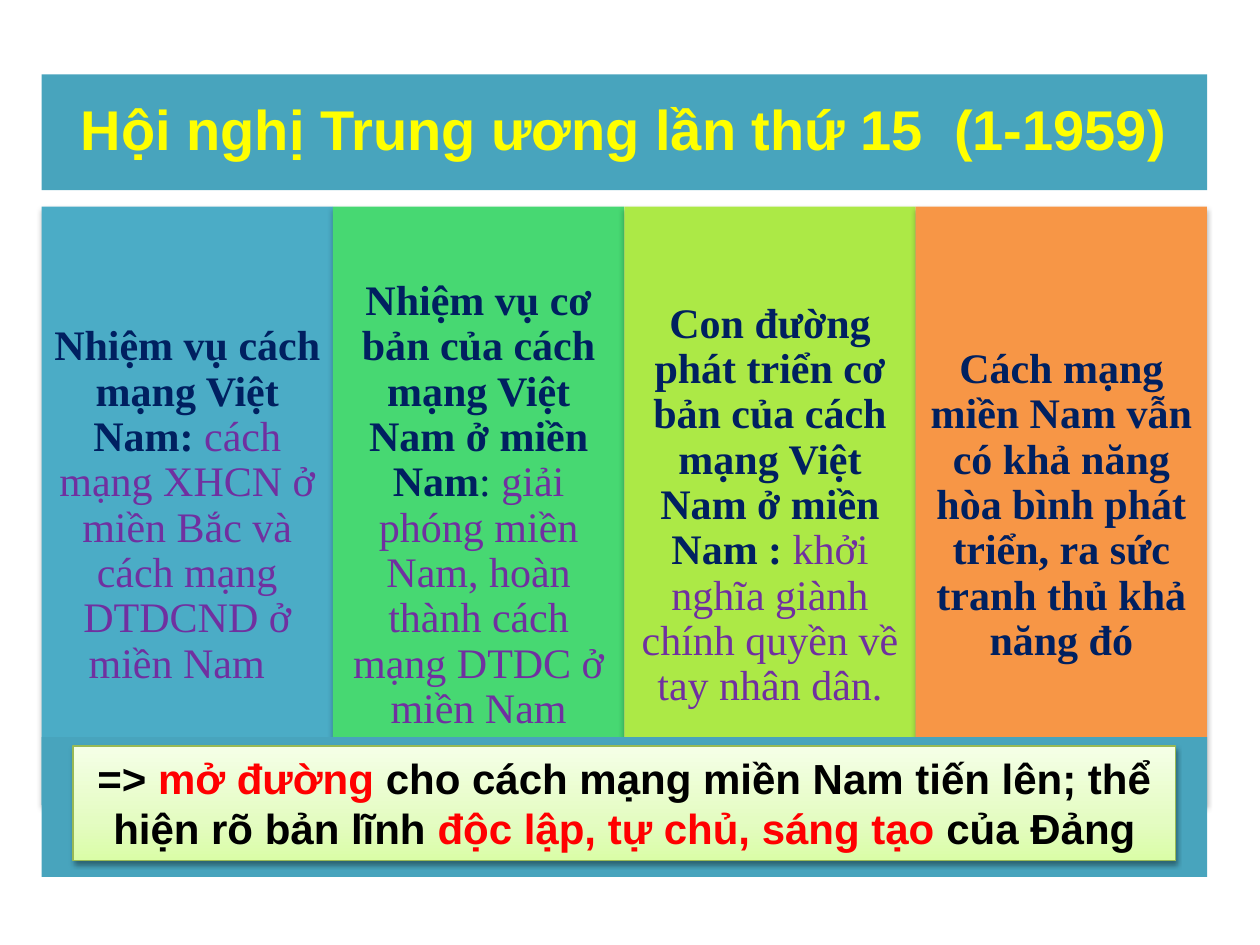
from lxml import etree
from pptx import Presentation
from pptx.dml.color import RGBColor
from pptx.enum.shapes import MSO_SHAPE as SHAPE
from pptx.enum.text import MSO_ANCHOR as ANCHOR, PP_ALIGN as ALIGN
from pptx.oxml import parse_xml
from pptx.oxml.ns import nsdecls, qn
from pptx.util import Inches, Pt

TEAL = RGBColor(0x48, 0xA4, 0xBD)
BLUE = RGBColor(0x4B, 0xAC, 0xC6)
GREEN = RGBColor(0x47, 0xD8, 0x72)
LIME = RGBColor(0xAC, 0xE9, 0x46)
ORANGE = RGBColor(0xF7, 0x96, 0x46)
OLIVE = RGBColor(0x98, 0xB9, 0x55)
YELLOW = RGBColor(0xFF, 0xFF, 0x00)
NAVY = RGBColor(0x00, 0x20, 0x60)
PURPLE = RGBColor(0x70, 0x30, 0xA0)
BLACK = RGBColor(0x00, 0x00, 0x00)
RED = RGBColor(0xFF, 0x00, 0x00)

LEFT, WIDTH = 0.33, 9.25

prs = Presentation()
prs.slide_width, prs.slide_height = Inches(10), Inches(7.5)
s = prs.slides.add_slide(prs.slide_layouts[6])


def add_box(x, y, w, h, fill=None, shadow=None):
    """Add a borderless rectangle; shadow is (opacity %, distance in points)."""
    sp = s.shapes.add_shape(SHAPE.RECTANGLE, Inches(x), Inches(y), Inches(w), Inches(h))
    sp.shadow.inherit = False
    sp.line.fill.background()
    if fill is not None:
        sp.fill.solid()
        sp.fill.fore_color.rgb = fill
    if shadow:
        opacity, distance = shadow
        sp._element.spPr.find(qn("a:effectLst")).append(parse_xml(
            f'<a:outerShdw {nsdecls("a")} blurRad="{Pt(3.1)}" dist="{Pt(distance)}" '
            f'dir="5400000" rotWithShape="0"><a:srgbClr val="000000">'
            f'<a:alpha val="{opacity * 1000}"/></a:srgbClr></a:outerShdw>'))
    return sp


def write(sp, runs, font, size, inset=None):
    """Fill a shape with (text, colour, bold) runs; an inset also tightens the lines."""
    tf = sp.text_frame
    tf.word_wrap = True
    tf.vertical_anchor = ANCHOR.TOP
    p = tf.paragraphs[0]
    p.alignment = ALIGN.CENTER
    if inset:
        tf.vertical_anchor = ANCHOR.MIDDLE
        tf.margin_left = tf.margin_right = Inches(inset)
        tf.margin_top = tf.margin_bottom = Inches(inset)
        p.line_spacing = 0.9
        after = etree.SubElement(p._p.get_or_add_pPr(), qn("a:spcAft"))
        etree.SubElement(after, qn("a:spcPct"), val="35000")
    for text, color, bold in runs:
        r = p.add_run()
        r.text = text
        r.font.name, r.font.size, r.font.bold = font, Pt(size), bold
        r.font.color.rgb = color


# Title band
title = add_box(LEFT, 0.59, WIDTH, 0.92, TEAL)
write(title, [("Hội nghị Trung ương lần thứ 15  (1-1959)", YELLOW, True)], "Arial", 32, 0.13)

# Four columns
columns = [
    (BLUE, [("Nhiệm vụ cách mạng Việt Nam: ", NAVY, True),
            ("cách mạng XHCN ở miền Bắc và cách mạng DTDCND ở miền Nam  ", PURPLE, False)]),
    (GREEN, [("Nhiệm vụ cơ bản của cách mạng Việt Nam ở miền Nam", NAVY, True),
             (": ", NAVY, False),
             ("giải phóng miền Nam, hoàn thành cách mạng DTDC ở miền Nam", PURPLE, False)]),
    (LIME, [("Con đường phát triển cơ bản của cách mạng Việt Nam ở miền Nam : ", NAVY, True),
            ("khởi nghĩa giành chính quyền về tay nhân dân.", PURPLE, False)]),
    (ORANGE, [("Cách mạng miền Nam vẫn có khả năng hòa bình phát triển, "
               "ra sức tranh thủ khả năng đó", NAVY, True)]),
]
column_width = WIDTH / len(columns)
for i, (fill, runs) in enumerate(columns):
    column = add_box(LEFT + i * column_width, 1.64, column_width, 4.75, fill, shadow=(35, 1.8))
    write(column, runs, "Times New Roman", 24, 0.1)

# Bottom band with the conclusion
add_box(LEFT, 5.85, WIDTH, 1.11, TEAL)
conclusion = add_box(0.58, 5.92, 8.75, 0.91, shadow=(38, 1.6))
conclusion.line.color.rgb = OLIVE
conclusion.line.width = Pt(0.75)
conclusion.fill.gradient()
conclusion.fill.gradient_angle = 90
stops = conclusion._element.spPr.find(qn("a:gradFill")).find(qn("a:gsLst"))
for stop in list(stops):
    stops.remove(stop)
for position, color in [(0, "DAFDA7"), (35, "E4FCC2"), (100, "F5FFE7")]:
    stop = etree.SubElement(stops, qn("a:gs"), pos=str(position * 1000))
    etree.SubElement(stop, qn("a:srgbClr"), val=color)
write(conclusion, [
    ("=> ", BLACK, True),
    ("mở đường ", RED, True),
    ("cho cách mạng miền Nam tiến lên; thể hiện rõ bản lĩnh ", BLACK, True),
    ("độc lập, tự chủ, sáng tạo ", RED, True),
    ("của Đảng", BLACK, True),
], "Arial", 24)

prs.save("out.pptx")
